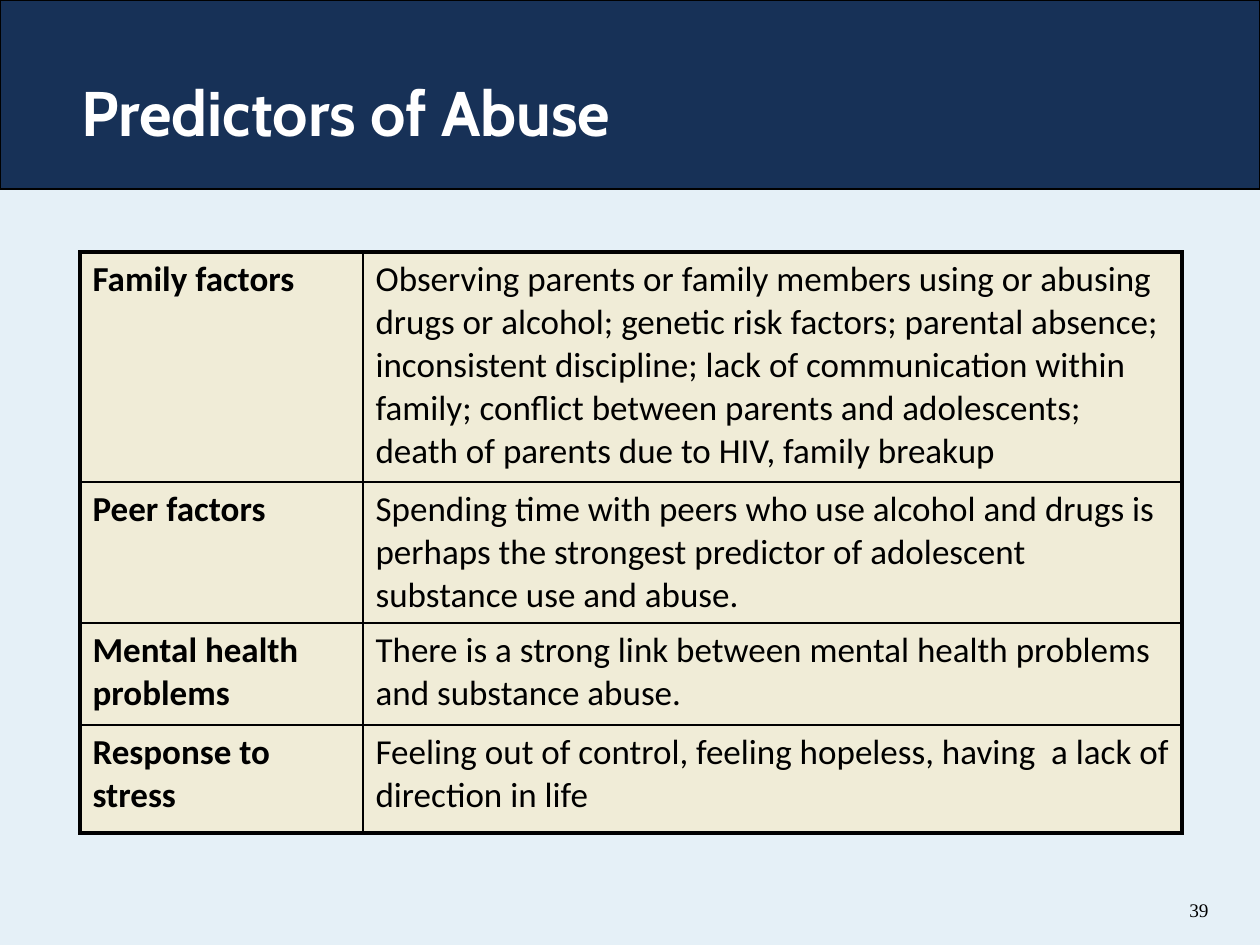
from dataclasses import dataclass

from lxml.etree import SubElement
from pptx import Presentation
from pptx.dml.color import RGBColor
from pptx.enum.shapes import MSO_SHAPE
from pptx.enum.text import MSO_ANCHOR, PP_ALIGN
from pptx.oxml.ns import qn
from pptx.slide import Slide
from pptx.table import _Cell
from pptx.text.text import TextFrame
from pptx.util import Emu, Pt

PIXELS_PER_INCH = 126


@dataclass(frozen=True)
class Theme:
    """Colours, fonts, type sizes and line widths of the slide."""

    background: str = "E5F0F7"
    header: str = "173157"
    cell: str = "F0ECD7"
    ink: str = "000000"
    title_ink: str = "FFFFFF"
    title_font: str = "Cabin"
    body_font: str = "Calibri"
    number_font: str = "Times New Roman"
    title_size: int = 36
    body_size: int = 20
    number_size: int = 11
    header_line: float = 0.75
    inner_line: float = 1
    outer_line: float = 2.25


@dataclass(frozen=True)
class Box:
    """A rectangle in px."""

    left: int
    top: int
    width: int
    height: int

    def emu(self) -> tuple[Emu, ...]:
        """Return the four lengths in EMU."""
        return tuple(px(n) for n in (self.left, self.top, self.width, self.height))


@dataclass(frozen=True)
class Predictor:
    """One table row: a factor, its description and its height in px."""

    factor: str
    description: str
    height: int


THEME = Theme()
PAGE = Box(0, 0, 1260, 945)
HEADER = Box(0, 0, 1260, 189)
TITLE = Box(69, 67, 1139, 154)
NUMBER = Box(1144, 885, 77, 50)
TABLE_LEFT, TABLE_TOP = 80, 252
COLUMN_WIDTHS = (283, 819)
PREDICTORS = (
    Predictor(
        "Family factors",
        "Observing parents or family members using or abusing drugs or alcohol; "
        "genetic risk factors; parental absence; inconsistent discipline; "
        "lack of communication within family; conflict between parents and "
        "adolescents; death of parents due to HIV, family breakup",
        230,
    ),
    Predictor(
        "Peer factors",
        "Spending time with peers who use alcohol and drugs is perhaps the "
        "strongest predictor of adolescent substance use and abuse.",
        141,
    ),
    Predictor(
        "Mental health problems",
        "There is a strong link between mental health problems and substance abuse.",
        102,
    ),
    Predictor(
        "Response to stress",
        "Feeling out of control, feeling hopeless, having  a lack of direction in life",
        108,
    ),
)


def px(length: int) -> Emu:
    """Turn px into EMU."""
    return Emu(round(length * 914400 / PIXELS_PER_INCH))


def write(frame: TextFrame, text: str, color: str, **formats: object) -> None:
    """Write one span of text with the given font values."""
    span = frame.paragraphs[0].add_run()
    span.text = text
    span.font.color.rgb = RGBColor.from_string(color)
    for name, value in formats.items():
        setattr(span.font, name, value)


def add_text_box(slide: Slide, box: Box, anchor: MSO_ANCHOR, align: PP_ALIGN) -> TextFrame:
    """Add a wrapping text box and return its frame."""
    frame = slide.shapes.add_textbox(*box.emu()).text_frame
    for name, value in {"word_wrap": True, "vertical_anchor": anchor}.items():
        setattr(frame, name, value)
    frame.paragraphs[0].alignment = align
    return frame


def add_header(slide: Slide) -> None:
    """Draw the header band."""
    band = slide.shapes.add_shape(MSO_SHAPE.RECTANGLE, *HEADER.emu())
    band.shadow.inherit = False
    band.fill.solid()
    band.fill.fore_color.rgb = RGBColor.from_string(THEME.header)
    band.line.color.rgb = RGBColor.from_string(THEME.ink)
    band.line.width = Pt(THEME.header_line)


def style_cell(cell: _Cell, outer_sides: dict[str, bool]) -> None:
    """Draw the cell borders, thick on outer sides, and fill the cell."""
    properties = cell._tc.get_or_add_tcPr()
    for side, is_outer in outer_sides.items():
        width = Pt(THEME.outer_line if is_outer else THEME.inner_line)
        line = SubElement(properties, qn(f"a:ln{side}"), w=str(int(width)))
        fill = SubElement(line, qn("a:solidFill"))
        SubElement(fill, qn("a:srgbClr"), val=THEME.ink)
    cell.fill.solid()
    cell.fill.fore_color.rgb = RGBColor.from_string(THEME.cell)


def add_predictor_table(slide: Slide) -> None:
    """Add the table of predictors."""
    last_row, last_column = len(PREDICTORS) - 1, len(COLUMN_WIDTHS) - 1
    height = sum(predictor.height for predictor in PREDICTORS)
    box = Box(TABLE_LEFT, TABLE_TOP, sum(COLUMN_WIDTHS), height)
    table = slide.shapes.add_table(
        len(PREDICTORS), len(COLUMN_WIDTHS), *box.emu()
    ).table
    for name, value in {"first_row": False, "horz_banding": False}.items():
        setattr(table, name, value)
    for column, width in zip(table.columns, COLUMN_WIDTHS):
        column.width = px(width)
    for row, predictor in enumerate(PREDICTORS):
        table.rows[row].height = px(predictor.height)
        for column, text in enumerate((predictor.factor, predictor.description)):
            cell = table.cell(row, column)
            style_cell(cell, {
                "L": column == 0,
                "R": column == last_column,
                "T": row == 0,
                "B": row == last_row,
            })
            write(cell.text_frame, text, THEME.ink, name=THEME.body_font,
                  size=Pt(THEME.body_size), bold=column == 0)


def main() -> None:
    """Build and save the slide."""
    deck = Presentation()
    deck.slide_width, deck.slide_height = px(PAGE.width), px(PAGE.height)
    slide = deck.slides.add_slide(deck.slide_layouts[6])
    slide.background.fill.solid()
    slide.background.fill.fore_color.rgb = RGBColor.from_string(THEME.background)
    add_header(slide)
    number = add_text_box(slide, NUMBER, MSO_ANCHOR.MIDDLE, PP_ALIGN.RIGHT)
    write(number, "39", THEME.ink, name=THEME.number_font, size=Pt(THEME.number_size))
    add_predictor_table(slide)
    title = add_text_box(slide, TITLE, MSO_ANCHOR.TOP, PP_ALIGN.LEFT)
    write(title, "Predictors of Abuse", THEME.title_ink, name=THEME.title_font,
          size=Pt(THEME.title_size), bold=True)
    deck.save("out.pptx")


if __name__ == "__main__":
    main()
